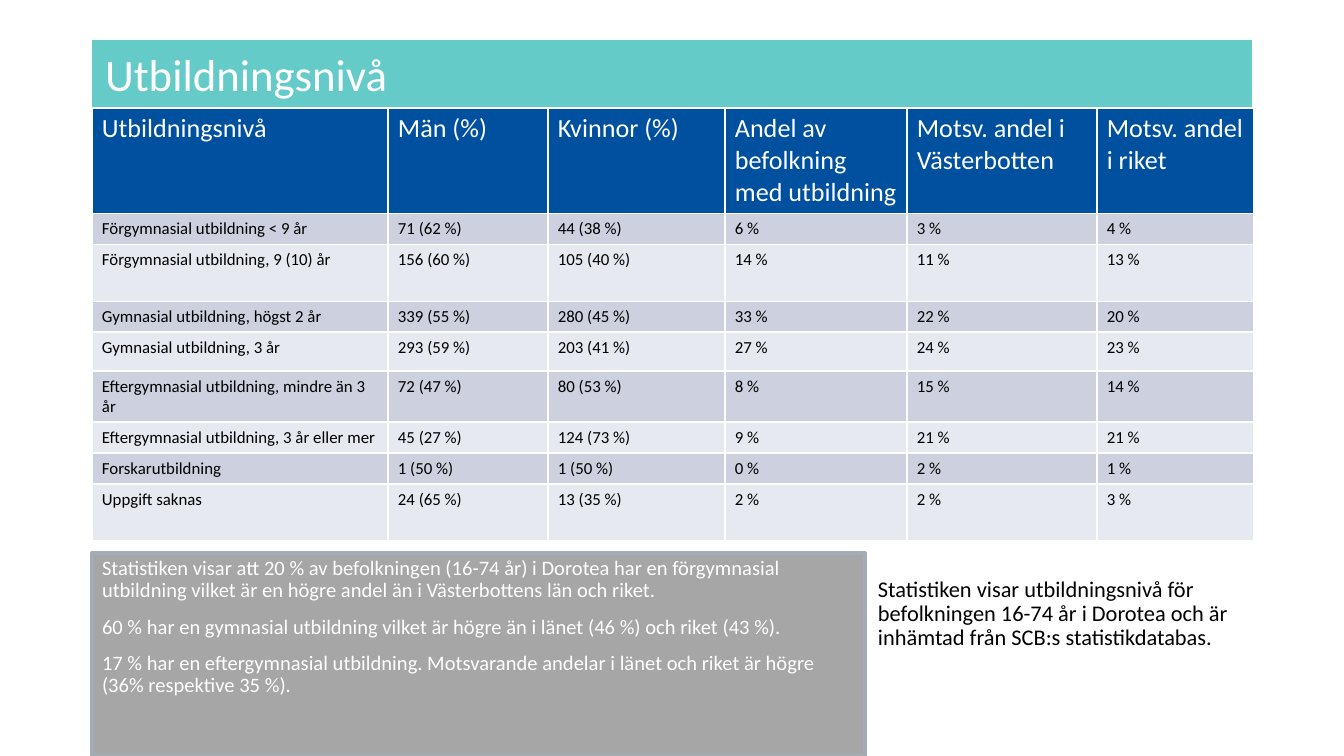
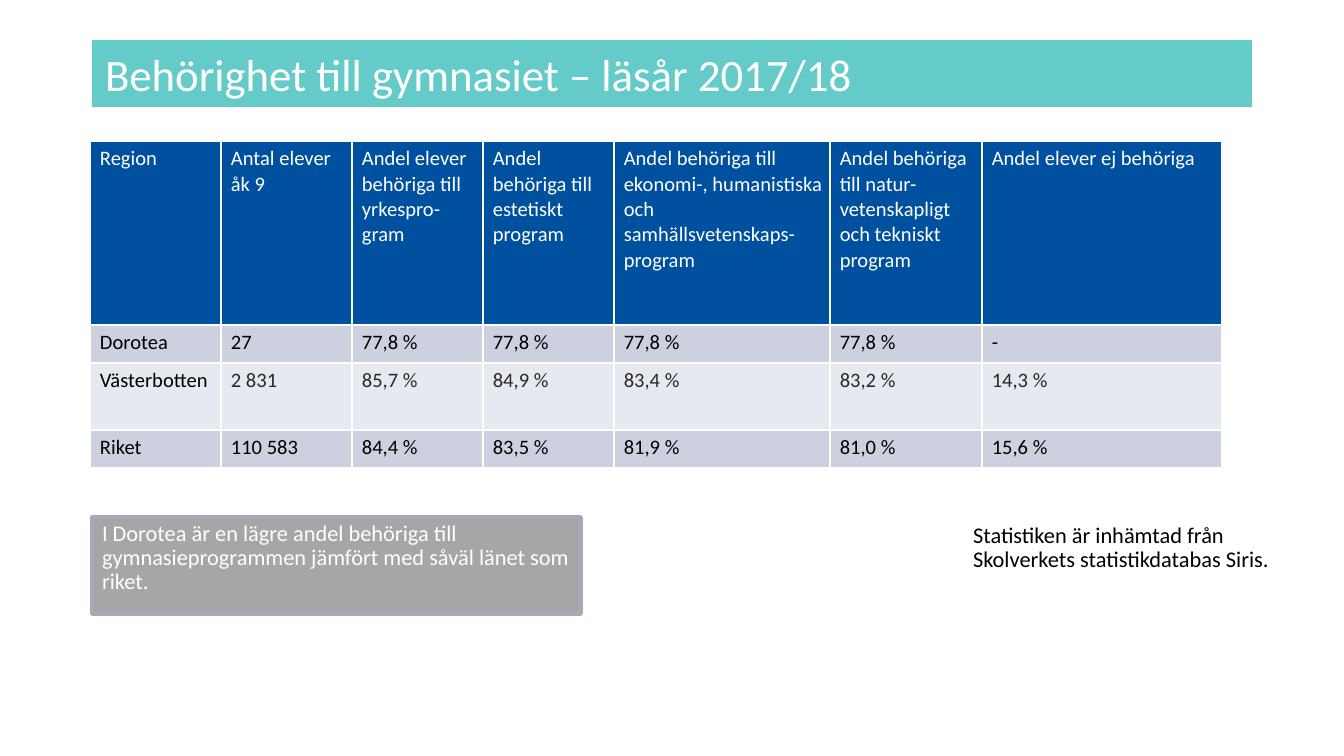
from lxml import etree
from pptx import Presentation
from pptx import util as u
from pptx.dml.color import RGBColor
from pptx.enum import shapes, text
from pptx.oxml import ns

TEAL = RGBColor(0x64, 0xCB, 0xC9)
BLUE = RGBColor(0x00, 0x50, 0xA0)
DARK = RGBColor(0xCC, 0xD0, 0xDF)
LIGHT = RGBColor(0xE7, 0xE9, 0xF0)
GREY = RGBColor(0xA6, 0xA6, 0xA6)
EDGE = RGBColor(0xA3, 0xAB, 0xB6)
WHITE = RGBColor(0xFF, 0xFF, 0xFF)
BLACK = RGBColor(0x00, 0x00, 0x00)
SOFT = RGBColor(0x29, 0x29, 0x29)
SCALE = 914400 / 134.4


def px(*sizes):
    return [u.Emu(round(size * SCALE)) for size in sizes]


def write(hold, frame, lines, size, color, inset, lead=None, gap=0):
    hold.margin_left, hold.margin_top, hold.margin_right, hold.margin_bottom = px(*inset)
    for i, line in enumerate(lines):
        para = frame.paragraphs[0] if i == 0 else frame.add_paragraph()
        para.text = line
        para.alignment = text.PP_ALIGN.LEFT
        para.space_before = u.Pt(gap if i else 0)
        if lead:
            para.line_spacing = lead
            props = para._p.get_or_add_pPr()
            props.set("marL", "0")
            props.set("indent", "0")
            etree.SubElement(props, ns.qn("a:buNone"))
        para.font.size = u.Pt(size)
        para.font.name = "Calibri"
        para.font.bold = False
        para.font.color.rgb = color


WIDE = (13, 7, 13, 7)
SLIM = (10, 5, 10, 5)
CELL = (10, 5, 7, 5)

pages = [
    dict(
        layout=1,
        title="Utbildningsnivå",
        at=(92, 108),
        cols=[296, 160, 177, 182, 190, 157],
        rows=[104, 31, 57, 31, 39, 51, 31, 31, 57],
        sizes=(14, 9),
        soft=None,
        cells=[
            "Utbildningsnivå|Män (%)|Kvinnor (%)|Andel av befolkning med utbildning|Motsv. andel i Västerbotten|Motsv. andel i riket",
            "Förgymnasial utbildning < 9 år|71 (62 %)|44 (38 %)|6 %|3 %|4 %",
            "Förgymnasial utbildning, 9 (10) år|156 (60 %)|105 (40 %)|14 %|11 %|13 %",
            "Gymnasial utbildning, högst 2 år|339 (55 %)|280 (45 %)|33 %|22 %|20 %",
            "Gymnasial utbildning, 3 år|293 (59 %)|203 (41 %)|27 %|24 %|23 %",
            "Eftergymnasial utbildning, mindre än 3 år|72 (47 %)|80 (53 %)|8 %|15 %|14 %",
            "Eftergymnasial utbildning, 3 år eller mer|45 (27 %)|124 (73 %)|9 %|21 %|21 %",
            "Forskarutbildning|1 (50 %)|1 (50 %)|0 %|2 %|1 %",
            "Uppgift saknas|24 (65 %)|13 (35 %)|2 %|2 %|3 %",
        ],
        call=(92, 553, 773, 203),
        size=11,
        facts=[
            "Statistiken visar att 20 % av befolkningen (16-74 år) i Dorotea har en förgymnasial utbildning vilket är en högre andel än i Västerbottens län och riket.",
            "60 % har en gymnasial utbildning vilket är högre än i länet (46 %) och riket (43 %).",
            "17 % har en eftergymnasial utbildning. Motsvarande andelar i länet och riket är högre (36% respektive 35 %).",
        ],
        side=(865, 571, 388, 104),
        note="Statistiken visar utbildningsnivå för befolkningen 16-74 år i Dorotea och är inhämtad från SCB:s statistikdatabas.",
    ),
    dict(
        layout=3,
        title="Behörighet till gymnasiet – läsår 2017/18",
        at=(90, 141),
        cols=[131, 131, 131, 131, 216, 152, 240],
        rows=[184, 38, 67, 38],
        sizes=(11, 11),
        soft=2,
        cells=[
            "Region|Antal elever åk 9|Andel elever behöriga till yrkespro-gram|Andel behöriga till estetiskt program|Andel behöriga till ekonomi-, humanistiska och samhällsvetenskaps-program|Andel behöriga till natur-vetenskapligt och tekniskt program|Andel elever ej behöriga",
            "Dorotea|27|77,8 %|77,8 %|77,8 %|77,8 %|-",
            "Västerbotten|2 831|85,7 %|84,9 %|83,4 %|83,2 %|14,3 %",
            "Riket|110 583|84,4 %|83,5 %|81,9 %|81,0 %|15,6 %",
        ],
        call=(92, 517, 489, 97),
        size=12,
        facts=["I Dorotea är en lägre andel behöriga till gymnasieprogrammen jämfört med såväl länet som riket."],
        side=(960, 517, 325, 99),
        note="Statistiken är inhämtad från Skolverkets statistikdatabas Siris.",
    ),
]

deck = Presentation()
deck.slide_width, deck.slide_height = px(1344, 756)

for page in pages:
    slide = deck.slides.add_slide(deck.slide_layouts[page["layout"]])

    title = slide.shapes.title
    title.left, title.top, title.width, title.height = px(92, 40, 1160, 67)
    title.fill.solid()
    title.fill.fore_color.rgb = TEAL
    band = title.text_frame
    band.auto_size = text.MSO_AUTO_SIZE.NONE
    band.vertical_anchor = text.MSO_ANCHOR.MIDDLE
    write(band, band, [page["title"]], 24, WHITE, WIDE)

    cols, rows = page["cols"], page["rows"]
    table = slide.shapes.add_table(
        len(rows), len(cols), *px(*page["at"], sum(cols), sum(rows))).table
    for col, width in zip(table.columns, px(*cols)):
        col.width = width
    for row, height in zip(table.rows, px(*rows)):
        row.height = height
    head, body = page["sizes"]
    for r, line in enumerate(page["cells"]):
        for c, word in enumerate(line.split("|")):
            cell = table.cell(r, c)
            cell.fill.solid()
            cell.fill.fore_color.rgb = BLUE if r == 0 else DARK if r % 2 else LIGHT
            color = WHITE if r == 0 else SOFT if r == page["soft"] and c else BLACK
            write(cell, cell.text_frame, [word], body if r else head, color, CELL)

    if page["layout"] == 3:
        call = slide.placeholders[2]
        call.left, call.top, call.width, call.height = px(*page["call"])
    else:
        call = slide.shapes.add_shape(shapes.MSO_SHAPE.RECTANGLE, *px(*page["call"]))
    call.shadow.inherit = False
    call.fill.solid()
    call.fill.fore_color.rgb = GREY
    call.line.color.rgb = EDGE
    call.line.width = u.Pt(2)

    side = slide.placeholders[1]
    side.left, side.top, side.width, side.height = px(*page["side"])

    fact, note = call.text_frame, side.text_frame
    for box in (fact, note):
        box.word_wrap = True
        box.auto_size = text.MSO_AUTO_SIZE.NONE
        box.vertical_anchor = text.MSO_ANCHOR.TOP
    write(fact, fact, page["facts"], page["size"], WHITE, SLIM, 0.9, 7.5)
    write(note, note, [page["note"]], 12, BLACK, WIDE, 0.9)

deck.save("out.pptx")
